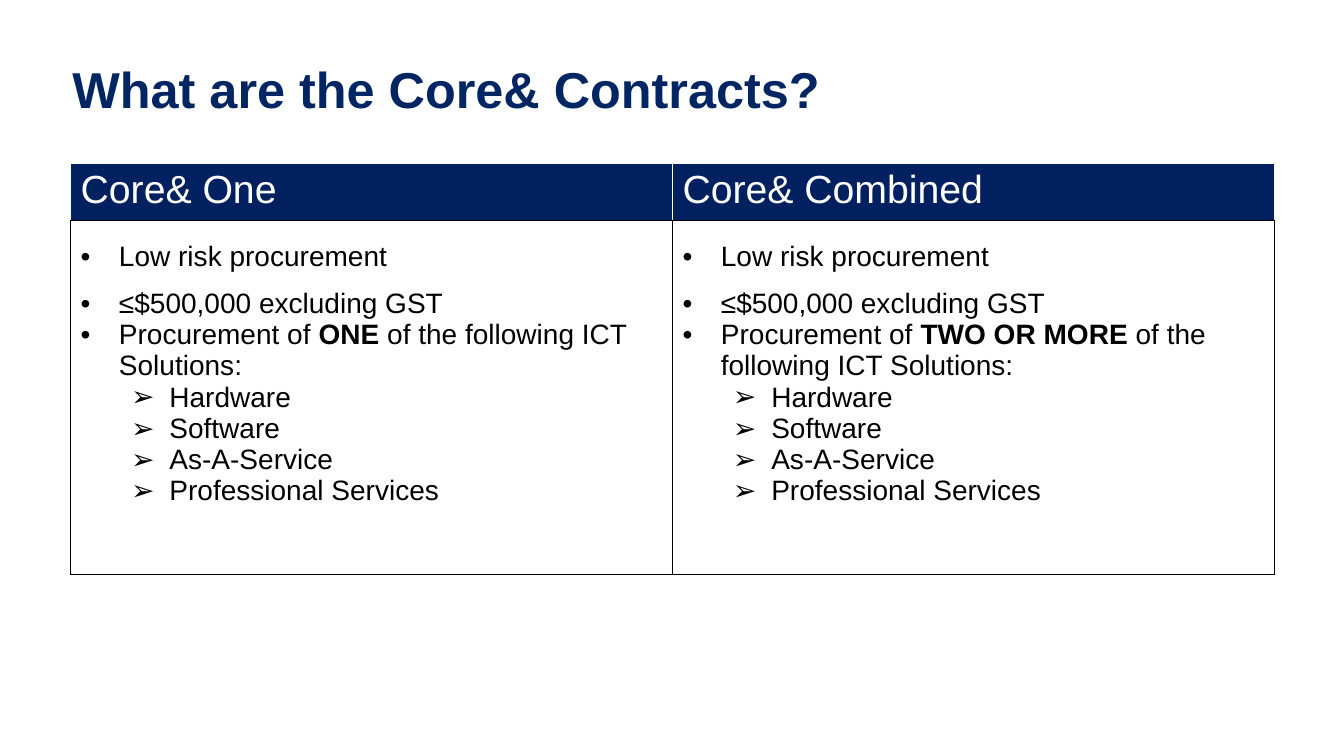
from dataclasses import dataclass

from lxml.etree import SubElement as Sub
from pptx import Presentation
from pptx.dml.color import RGBColor as Rgb
from pptx.oxml.ns import qn
from pptx.util import Inches, Pt


@dataclass(frozen=True)
class Theme:
    font: str = "Arial"
    title_color: str = "002563"
    header_fill: str = "002060"
    ink: str = "000000"
    paper: str = "FFFFFF"
    title_size: int = 36
    header_size: int = 28
    body_size: int = 20


SOLUTIONS = ["Hardware", "Software", "As-A-Service", "Professional Services"]
CONTRACTS = {"Core& One": "ONE", "Core& Combined": "TWO OR MORE"}


def add_span(para, text, *, font, size, color, bold=False):
    span = para.add_run()
    span.text = text
    span.font.name = font
    span.font.size = Pt(size)
    span.font.bold = bold
    span.font.color.rgb = Rgb.from_string(color)


class SlideBuilder:
    """Holds the theme and the current page, and adds styled elements to it."""

    def __init__(self, page, theme):
        self.page = page
        self.theme = theme

    def title(self, text, left, top, width, height):
        box = self.page.shapes.add_textbox(Inches(left), Inches(top), Inches(width), Inches(height))
        box.text_frame.word_wrap = True
        para = box.text_frame.paragraphs[0]
        para.line_spacing = 0.9
        add_span(para, text, font=self.theme.font, size=self.theme.title_size,
                 color=self.theme.title_color, bold=True)

    def table(self, left, top, width, row_heights, columns):
        frame = self.page.shapes.add_table(len(row_heights), columns, Inches(left), Inches(top),
                                           Inches(width), Inches(sum(row_heights)))
        for row, height in zip(frame.table.rows, row_heights):
            row.height = Inches(height)
        return frame.table

    def paint_cell(self, cell, fill, line, bottom):
        cell.fill.solid()
        cell.fill.fore_color.rgb = Rgb.from_string(fill)
        properties = cell._tc.get_or_add_tcPr()
        sides = {"L": line, "R": line, "T": line, "B": bottom}
        for position, (side, color) in enumerate(sides.items()):
            border = Sub(properties, qn(f"a:ln{side}"), w=str(Pt(1)))
            Sub(Sub(border, qn("a:solidFill")), qn("a:srgbClr"), val=color)
            properties.insert(position, border)

    def header_cell(self, cell, text):
        theme = self.theme
        self.paint_cell(cell, theme.header_fill, theme.paper, theme.ink)
        add_span(cell.text_frame.paragraphs[0], text, font=theme.font,
                 size=theme.header_size, color=theme.paper)

    def bullet(self, para, mark, indent, spans, spacing=1.0, level=0):
        para.level = level
        para.line_spacing = spacing
        properties = para._p.get_or_add_pPr()
        properties.set("marL", str(Inches(indent)))
        properties.set("indent", str(Inches(-0.38)))
        Sub(properties, qn("a:buFont"), typeface=self.theme.font)
        Sub(properties, qn("a:buChar"), char=mark)
        for text, bold in spans:
            add_span(para, text, font=self.theme.font, size=self.theme.body_size,
                     color=self.theme.ink, bold=bold)

    def body_cell(self, cell, count):
        theme = self.theme
        self.paint_cell(cell, theme.paper, theme.ink, theme.ink)
        frame = cell.text_frame
        self.bullet(frame.paragraphs[0], "•", 0.38, [("Low risk procurement", False)], spacing=1.5)
        self.bullet(frame.add_paragraph(), "•", 0.38, [("≤$500,000 excluding GST", False)], spacing=1.5)
        scope = [("Procurement of ", False), (count, True), (" of the following ICT Solutions:", False)]
        self.bullet(frame.add_paragraph(), "•", 0.38, scope)
        for solution in SOLUTIONS:
            self.bullet(frame.add_paragraph(), "➢", 0.88, [(solution, False)], level=1)


def main():
    deck = Presentation()
    deck.slide_width, deck.slide_height = Inches(13.33), Inches(7.5)
    page = deck.slides.add_slide(deck.slide_layouts[6])
    builder = SlideBuilder(page, Theme())
    builder.title("What are the Core& Contracts?", 0.62, 0.6, 11.94, 0.78)
    table = builder.table(0.7, 1.62, 11.94, [0.54, 3.51], len(CONTRACTS))
    for column, (name, count) in enumerate(CONTRACTS.items()):
        builder.header_cell(table.cell(0, column), name)
        builder.body_cell(table.cell(1, column), count)
    deck.save("out.pptx")


if __name__ == "__main__":
    main()
